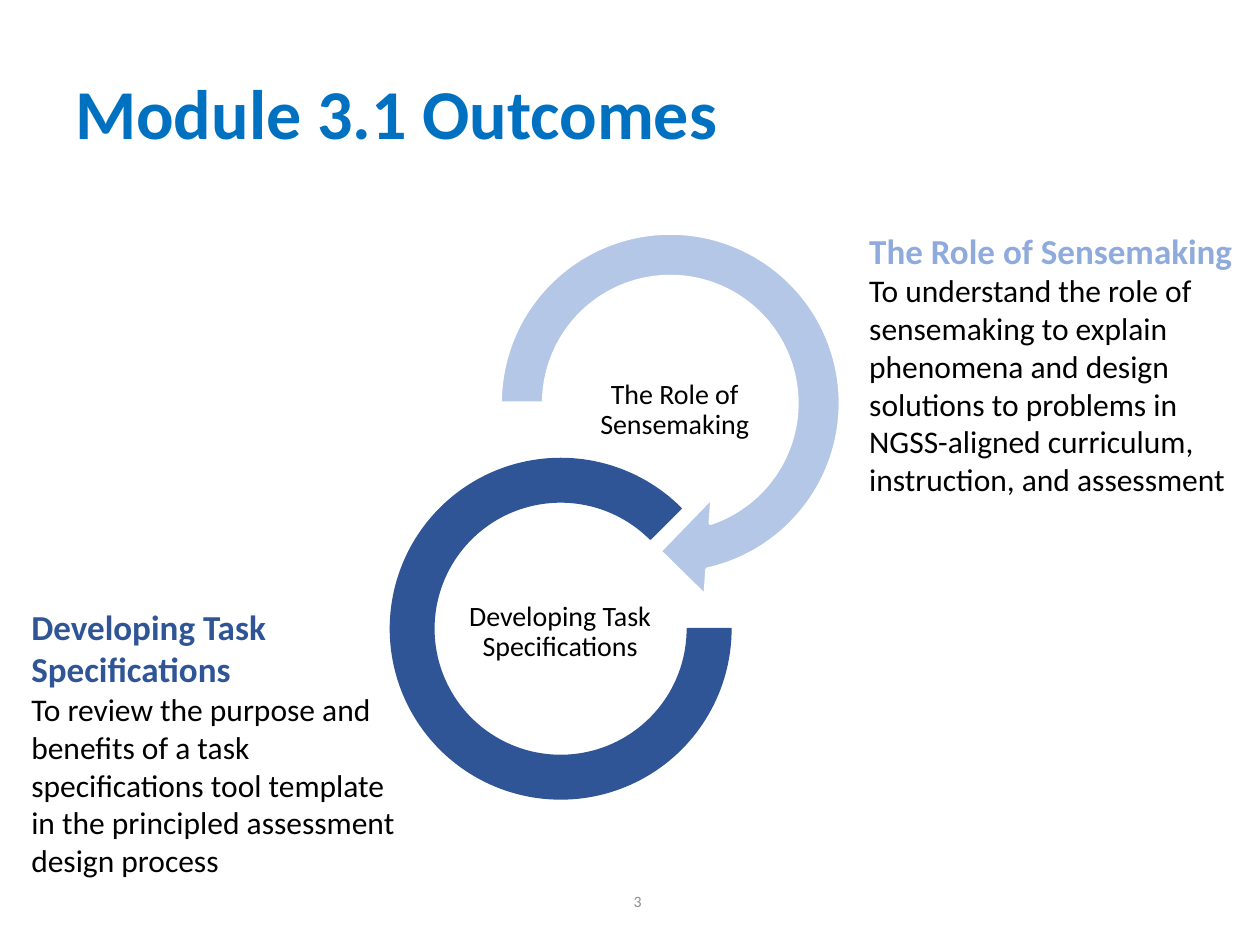
from pptx import Presentation
from pptx.dml.color import RGBColor
from pptx.enum import shapes, text
from pptx.util import Inches, Pt

BLACK = RGBColor(0, 0, 0)
WHITE = RGBColor(255, 255, 255)
GRAY = RGBColor(0x8C, 0x8C, 0x8C)
TITLE_BLUE = RGBColor(0x00, 0x70, 0xC0)
PALE_BLUE = RGBColor(0xB4, 0xC7, 0xE7)
SOFT_BLUE = RGBColor(0x8F, 0xAA, 0xDC)
DEEP_BLUE = RGBColor(0x2F, 0x55, 0x97)

TITLE = "Module 3.1 Outcomes"
PAGE_NUMBER = "3"
# Boxes are left, top, width, height in inches
OUTCOMES = [
    dict(name="The Role of Sensemaking",
         detail="To understand the role of sensemaking to explain phenomena and "
                "design solutions to problems in NGSS-aligned curriculum, "
                "instruction, and assessment",
         heading_color=SOFT_BLUE, detail_box=(6.8, 1.77, 3.11, 2.26),
         ring=shapes.MSO_SHAPE.CIRCULAR_ARROW, ring_box=(3.75, 1.63, 3.14, 3.14),
         ring_adjust=(0.11, 11.42, 45, 108, 0.125),
         fill=PALE_BLUE, outline=WHITE, outline_width=2,
         label_box=(4.48, 2.82, 1.75, 0.88)),
    dict(name="Developing Task Specifications",
         detail="To review the purpose and benefits of a task specifications tool "
                "template in the principled assessment design process",
         heading_color=DEEP_BLUE, detail_box=(0.15, 4.76, 3.11, 2.29),
         ring=shapes.MSO_SHAPE.BLOCK_ARC, ring_box=(3.1, 3.64, 2.7, 2.7),
         ring_adjust=(0, 189, 0.127),
         fill=DEEP_BLUE, outline=DEEP_BLUE, outline_width=1,
         label_box=(3.57, 4.58, 1.75, 0.88)),
]


def add_text(slide, box, lines, anchor=text.MSO_ANCHOR.MIDDLE,
             align=text.PP_ALIGN.LEFT, spacing=1.0, inset=None):
    """Add a text box; each line is (words, size, color, bold)."""
    frame = slide.shapes.add_textbox(*map(Inches, box)).text_frame
    frame.word_wrap = True
    frame.vertical_anchor = anchor
    if inset is not None:
        frame.margin_left = frame.margin_right = Inches(inset)
        frame.margin_top = frame.margin_bottom = Inches(inset)
    for i, (words, size, color, bold) in enumerate(lines):
        paragraph = frame.add_paragraph() if i else frame.paragraphs[0]
        paragraph.text = words
        paragraph.alignment = align
        paragraph.line_spacing = spacing
        font = paragraph.font
        font.name, font.size, font.bold = "Calibri", Pt(size), bold
        font.color.rgb = color


def add_ring(slide, outcome):
    ring = slide.shapes.add_shape(outcome["ring"], *map(Inches, outcome["ring_box"]))
    for i, value in enumerate(outcome["ring_adjust"]):
        ring.adjustments[i] = value
    ring.shadow.inherit = False
    ring.fill.solid()
    ring.fill.fore_color.rgb = outcome["fill"]
    ring.line.color.rgb = outcome["outline"]
    ring.line.width = Pt(outcome["outline_width"])


def main():
    prs = Presentation()
    prs.slide_width, prs.slide_height = Inches(10), Inches(7.5)
    slide = prs.slides.add_slide(prs.slide_layouts[6])

    # Page number and title
    add_text(slide, (2.94, 6.95, 2.25, 0.4), [(PAGE_NUMBER, 9, GRAY, False)],
             align=text.PP_ALIGN.RIGHT)
    add_text(slide, (0.5, 0.3, 9, 1.25), [(TITLE, 40, TITLE_BLUE, True)], spacing=0.9)

    # Linked rings with their labels
    for outcome in OUTCOMES:
        add_ring(slide, outcome)
        add_text(slide, outcome["label_box"], [(outcome["name"], 16, BLACK, False)],
                 align=text.PP_ALIGN.CENTER, spacing=0.9, inset=0.01)

    # Outcome descriptions
    for outcome in OUTCOMES:
        add_text(slide, outcome["detail_box"],
                 [(outcome["name"], 20, outcome["heading_color"], True),
                  (outcome["detail"], 18, BLACK, False)],
                 anchor=text.MSO_ANCHOR.TOP)

    prs.save("out.pptx")


if __name__ == "__main__":
    main()
